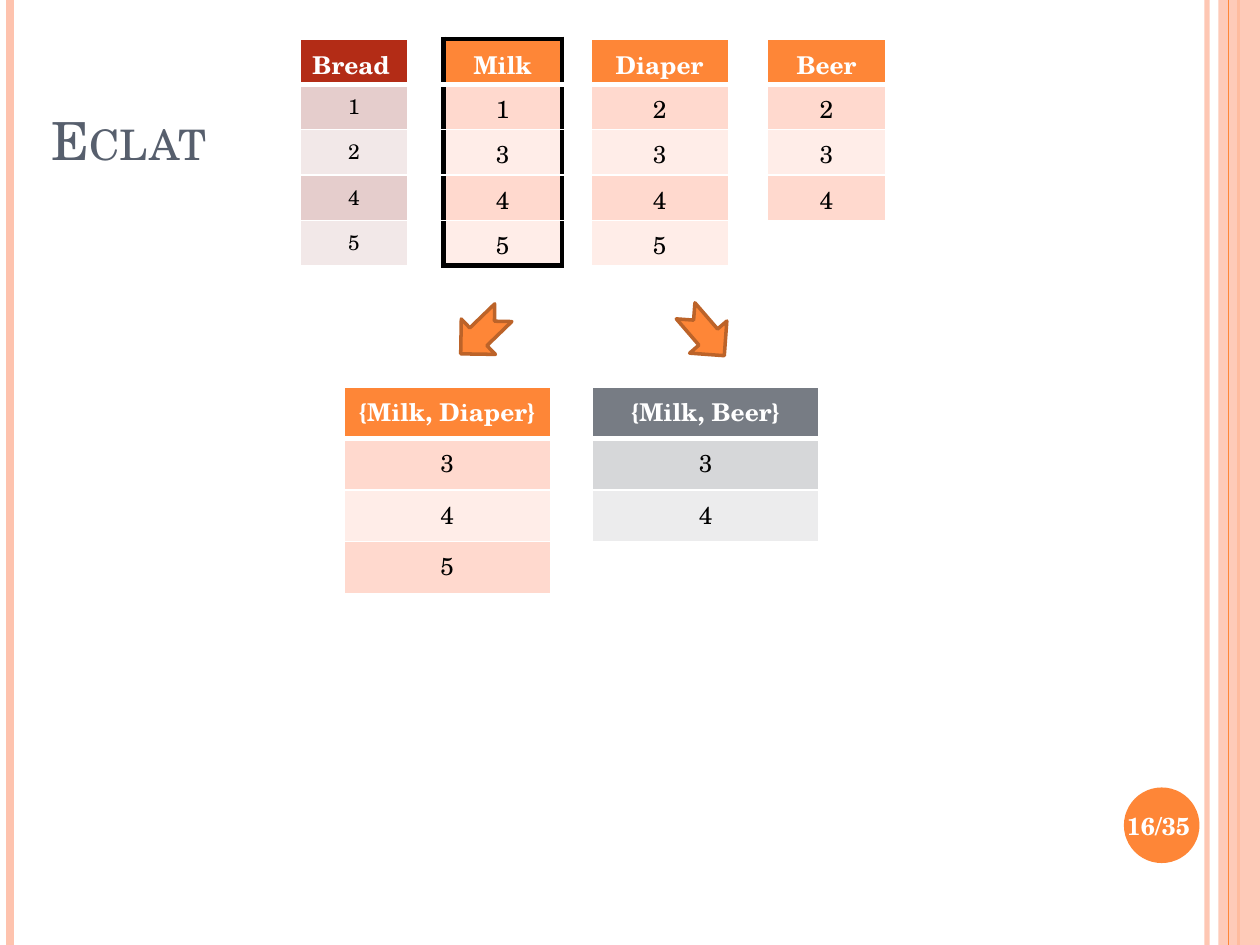
from lxml import etree
from pptx import Presentation
from pptx import util as u
from pptx.dml.color import RGBColor
from pptx.enum import shapes, text
from pptx.oxml.ns import qn

FONT = "TeX Gyre Schola"
WHITE, BLACK, ORANGE, PEACH = "FFFFFF", "000000", "FE8637", "FEC3AE"
ORANGE_BANDS = ("FFD9CE", "FFEDE8")
RED_BANDS = ("E5CDCC", "F2E8E8")
GRAY_BANDS = ("D6D7D9", "ECECED")


def paint(format_part, color, opacity=100):
    format_part.solid()
    format_part.fore_color.rgb = RGBColor.from_string(color)
    if opacity < 100:
        for node in format_part._xPr.iter(qn("a:srgbClr")):
            etree.SubElement(node, qn("a:alpha"), val=str(opacity * 1000))


def write(frame, content, size=14, color=BLACK, bold=False,
          align=text.PP_ALIGN.CENTER, anchor=text.MSO_ANCHOR.TOP, small_caps=False):
    frame.word_wrap = True
    frame.vertical_anchor = anchor
    paragraph = frame.paragraphs[0]
    paragraph.alignment = align
    run = paragraph.add_run()
    run.text = content
    run.font.name = FONT
    run.font.size = u.Pt(size)
    run.font.bold = bold
    run.font.color.rgb = RGBColor.from_string(color)
    if small_caps:
        run._r.get_or_add_rPr().set("cap", "small")


def add_figure(slide, kind, box, fill, opacity=100, line=None, rotation=0):
    shape = slide.shapes.add_shape(kind, *map(u.Inches, box))
    shape.shadow.inherit = False
    shape.rotation = rotation
    paint(shape.fill, fill, opacity)
    if line:
        paint(shape.line.fill, line)
        shape.line.width = u.Pt(2)
    else:
        shape.line.fill.background()
    return shape


def add_stripe(slide, x, height, color, width, opacity=100):
    stripe = slide.shapes.add_connector(
        shapes.MSO_CONNECTOR.STRAIGHT, u.Inches(x), 0, u.Inches(x), u.Inches(height))
    stripe.line.width = u.Pt(width)
    paint(stripe.line.fill, color, opacity)
    etree.SubElement(stripe._element.spPr, qn("a:effectLst"))


def add_frame(slide, width, height):
    add_stripe(slide, width - 0.42, height, PEACH, 3, 93)
    add_stripe(slide, 0.08, height, PEACH, 4.5)
    add_stripe(slide, width - 0.17, height, ORANGE, 1.5)
    add_figure(slide, shapes.MSO_SHAPE.RECTANGLE, (width - 0.33, 0, 0.33, height), PEACH, 87)
    add_stripe(slide, width - 0.25, height, ORANGE, 0.75)


def add_page_number(slide, left, top, diameter, content):
    add_figure(slide, shapes.MSO_SHAPE.OVAL, (left, top, diameter, diameter), ORANGE)
    label = slide.shapes.add_textbox(
        *map(u.Inches, (left - 0.09, top + 0.02, diameter + 0.13, 0.57)))
    label.text_frame.margin_left = label.text_frame.margin_right = 0
    write(label.text_frame, content, color=WHITE, bold=True, anchor=text.MSO_ANCHOR.MIDDLE)


def set_borders(cell, **sides):
    properties = cell._tc.get_or_add_tcPr()
    for side in "LRTB":
        color, width = sides[side]
        line = etree.SubElement(properties, qn(f"a:ln{side}"), w=str(u.Pt(width)))
        fill = etree.SubElement(line, qn("a:solidFill"))
        etree.SubElement(fill, qn("a:srgbClr"), val=color)


def add_item_table(slide, left, top, width, row_height, item, transactions,
                   header_fill=ORANGE, bands=ORANGE_BANDS, size=14,
                   header_align=text.PP_ALIGN.CENTER, outlined=False):
    entries = [item, *transactions]
    last = len(entries) - 1
    table = slide.shapes.add_table(
        len(entries), 1, *map(u.Inches, (left, top, width, row_height * len(entries)))).table
    table.horz_banding = False
    thin, thick = (WHITE, 1), (WHITE, 3)
    outer = (BLACK, 3) if outlined else thin
    for index, entry in enumerate(entries):
        table.rows[index].height = u.Inches(row_height)
        header = index == 0
        cell = table.cell(index, 0)
        top_line = outer if header else thick if index == 1 else thin
        bottom_line = thick if header else outer if index == last else thin
        set_borders(cell, L=outer, R=outer, T=top_line, B=bottom_line)
        paint(cell.fill, header_fill if header else bands[(index - 1) % 2])
        write(cell.text_frame, entry, size=14 if header else size,
              color=WHITE if header else BLACK, bold=header,
              align=header_align if header else text.PP_ALIGN.CENTER)


def add_single_items(slide, top, row_height):
    add_item_table(slide, 2.38, top, 0.86, row_height, "Bread", "1245", "B32C16", RED_BANDS,
                   size=12, header_align=text.PP_ALIGN.LEFT)
    add_item_table(slide, 3.52, top, 0.94, row_height, "Milk", "1345", outlined=True)
    add_item_table(slide, 4.69, top, 1.09, row_height, "Diaper", "2345")
    add_item_table(slide, 6.09, top, 0.94, row_height, "Beer", "234")


def add_item_pairs(slide, top, row_height):
    add_item_table(slide, 2.73, top, 1.64, row_height, "{Milk, Diaper}", "345")
    add_item_table(slide, 4.7, top, 1.8, row_height, "{Milk, Beer}", "34", "777C84", GRAY_BANDS)


def add_arrows(slide, top):
    for left, rotation in ((3.59, 136), (5.36, 49.2)):
        add_figure(slide, shapes.MSO_SHAPE.NOTCHED_RIGHT_ARROW, (left, top, 0.47, 0.39),
                   ORANGE, line="BC6329", rotation=rotation)


def add_title(slide, left, top, width, height, content):
    title = slide.shapes.title
    title.left, title.top, title.width, title.height = map(u.Inches, (left, top, width, height))
    write(title.text_frame, content, size=30, color="575F6D", align=text.PP_ALIGN.LEFT,
          anchor=text.MSO_ANCHOR.BOTTOM, small_caps=True)


def main():
    presentation = Presentation()
    presentation.slide_width, presentation.slide_height = u.Inches(10), u.Inches(7.5)
    slide = presentation.slides.add_slide(presentation.slide_layouts[5])
    add_frame(slide, 10, 7.5)
    add_title(slide, 0.31, 0.16, 8.17, 1.25, "Eclat")
    add_page_number(slide, 8.92, 6.25, 0.6, "16/35")
    add_single_items(slide, 0.31, 0.36)
    add_item_pairs(slide, 3.07, 0.41)
    add_arrows(slide, 2.45)
    presentation.save("out.pptx")


if __name__ == "__main__":
    main()
